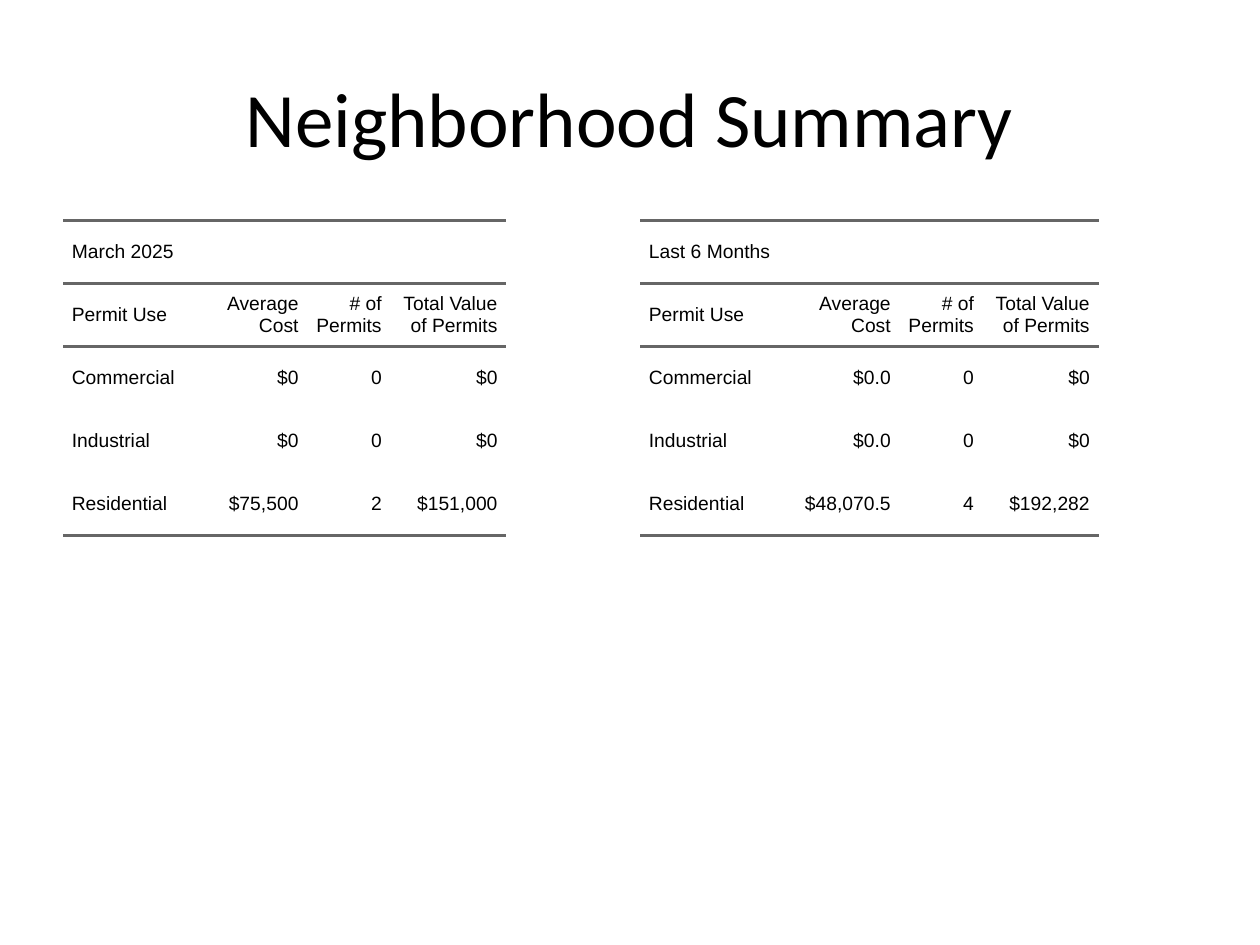
from dataclasses import dataclass

from lxml.etree import SubElement
from pptx import Presentation
from pptx.dml.color import RGBColor
from pptx.enum.text import MSO_ANCHOR, PP_ALIGN
from pptx.oxml.ns import qn
from pptx.util import Inches, Pt


@dataclass(frozen=True)
class Theme:
    """Colours, fonts and type sizes of the slide."""
    ink: str = "000000"
    rule: str = "666666"
    head: str = "Calibri"
    body: str = "Arial"
    big: int = 44
    small: int = 11
    line: float = 1.5
    gap: int = 5
    pad: float = 0.07


THEME = Theme()
HEADS = ["Permit Use", "Average Cost", "# of Permits", "Total Value of Permits"]
MARCH = [
    ["Commercial", "$0", "0", "$0"],
    ["Industrial", "$0", "0", "$0"],
    ["Residential", "$75,500", "2", "$151,000"],
]
HALF = [
    ["Commercial", "$0.0", "0", "$0"],
    ["Industrial", "$0.0", "0", "$0"],
    ["Residential", "$48,070.5", "4", "$192,282"],
]


def add_run(para, text, font, size):
    """Add one styled run to a paragraph."""
    run = para.add_run()
    run.text = text
    run.font.name = font
    run.font.size = Pt(size)
    run.font.color.rgb = RGBColor.from_string(THEME.ink)


def set_rules(cell, sides):
    """Draw the cell borders named in sides and hide the others."""
    props = cell._tc.get_or_add_tcPr()
    for side in "LRTB":
        line = SubElement(props, qn(f"a:ln{side}"))
        if side in sides:
            line.set("w", str(Pt(THEME.line)))
            fill = SubElement(line, qn("a:solidFill"))
            SubElement(fill, qn("a:srgbClr"), val=THEME.rule)
        else:
            line.set("w", "0")
            SubElement(line, qn("a:noFill"))


def set_cell(cell, text, align, sides):
    """Format one cell and write its text."""
    set_rules(cell, sides)
    cell.fill.background()
    cell.vertical_anchor = MSO_ANCHOR.MIDDLE
    cell.margin_left = cell.margin_right = 0
    cell.margin_top = cell.margin_bottom = Inches(THEME.pad)
    para = cell.text_frame.paragraphs[0]
    para.alignment = align
    para.space_before = para.space_after = Pt(THEME.gap)
    props = para._p.get_or_add_pPr()
    for name in ("marL", "marR"):
        props.set(name, str(Inches(THEME.pad)))
    props.set("indent", "0")
    if text:
        add_run(para, text, THEME.body, THEME.small)


def add_title(slide, box, text):
    """Place the slide title in its box."""
    title = slide.shapes.title
    title.left, title.top, title.width, title.height = map(Inches, box)
    frame = title.text_frame
    frame.vertical_anchor = MSO_ANCHOR.MIDDLE
    para = frame.paragraphs[0]
    para.alignment = PP_ALIGN.CENTER
    add_run(para, text, THEME.head, THEME.big)


def add_permits(slide, box, label, rows, widths):
    """Build one permit table in its box."""
    grid = [[label, "", "", ""], HEADS, *rows]
    frame = slide.shapes.add_table(len(grid), len(HEADS), *map(Inches, box))
    table = frame.table
    table.first_row = table.horz_banding = False
    for col, width in zip(table.columns, widths):
        col.width = Inches(width)
    for row in table.rows:
        row.height = Inches(0.5)
    for i, texts in enumerate(grid):
        sides = "TB" if i < 2 else "B" if i == len(grid) - 1 else "T" if i == 2 else ""
        for j, text in enumerate(texts):
            align = PP_ALIGN.RIGHT if j else PP_ALIGN.LEFT
            set_cell(table.cell(i, j), text, align, sides)
    table.cell(0, 0).merge(table.cell(0, len(HEADS) - 1))
    frame.width, frame.height = map(Inches, box[2:])


def main():
    """Build and save the slide."""
    deck = Presentation()
    deck.slide_width, deck.slide_height = Inches(10), Inches(7.5)
    slide = deck.slides.add_slide(deck.slide_layouts[5])
    add_permits(slide, (0.5, 1.75, 4.42, 4.95), "March 2025", MARCH,
                (1.1, 0.84, 0.66, 0.92))
    add_permits(slide, (5.08, 1.75, 4.42, 4.95), "Last 6 Months", HALF,
                (1.1, 0.96, 0.66, 0.92))
    add_title(slide, (0.5, 0.3, 9, 1.25), "Neighborhood Summary")
    deck.save("out.pptx")


if __name__ == "__main__":
    main()
